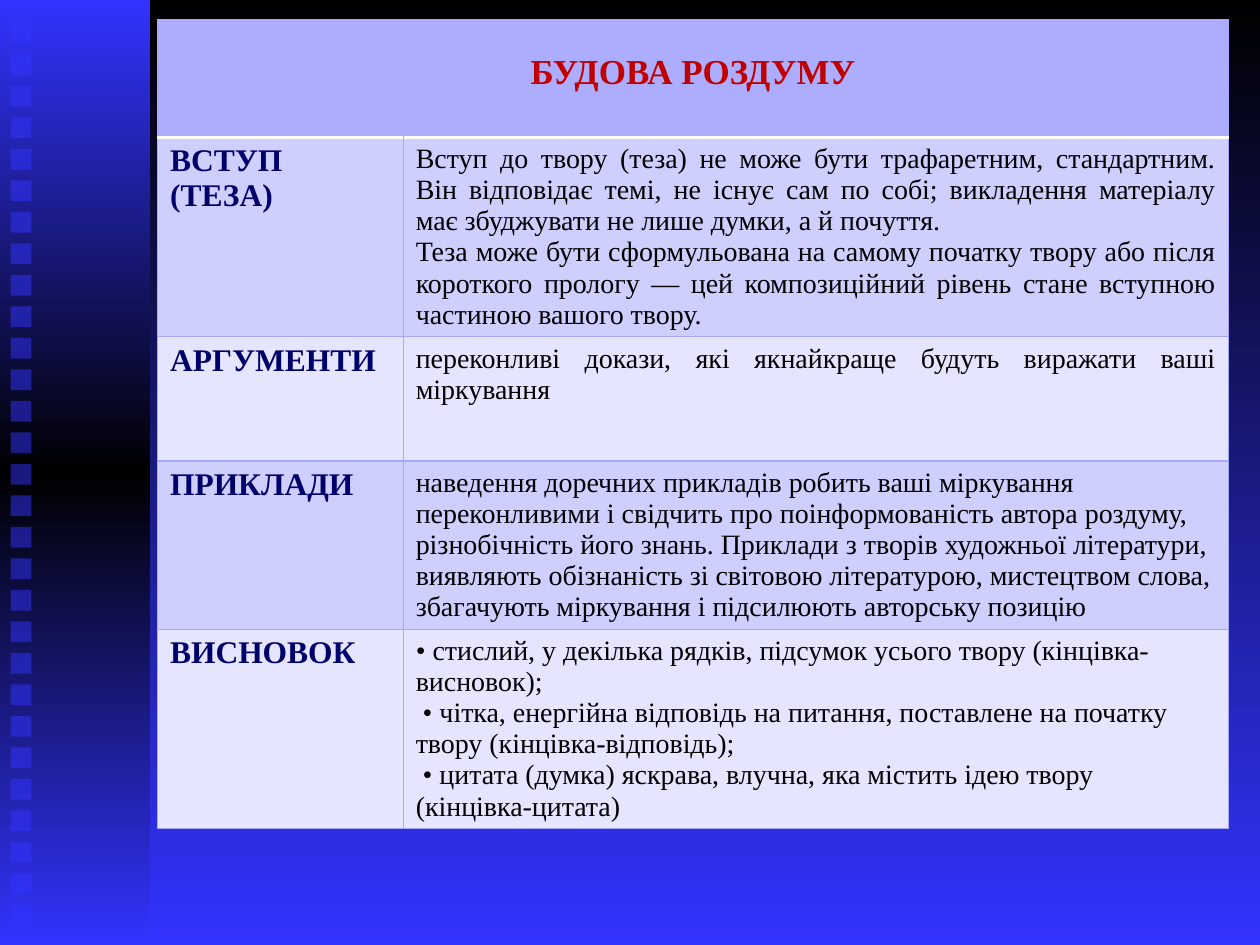
import copy
import dataclasses

import lxml.etree
import pptx
import pptx.dml.color
import pptx.enum.shapes
import pptx.enum.text
import pptx.oxml
import pptx.oxml.ns
import pptx.util

Pt = pptx.util.Pt
qn = pptx.oxml.ns.qn
ALIGN = pptx.enum.text.PP_ALIGN


@dataclasses.dataclass(frozen=True)
class Theme:
    """Colours, font and type sizes of the slide."""

    blue: str = "3333FF"
    black: str = "000000"
    white: str = "FFFFFF"
    header: str = "ADADFF"
    bands: tuple = ("CECEFF", "E5E5FF")
    border: str = "A7A7FB"
    title: str = "C00000"
    label: str = "00006B"
    font: str = "Times New Roman"
    title_size: float = 20
    label_size: float = 18
    body_size: float = 16


THEME = Theme()
TITLE = "БУДОВА РОЗДУМУ"
ROWS = [
    (114, ["ВСТУП", "(ТЕЗА)"], ALIGN.JUSTIFY, [
        "Вступ до твору (теза) не може бути трафаретним, стандартним. Він відповідає "
        "темі, не існує сам по собі; викладення матеріалу має збуджувати не лише "
        "думки, а й почуття.",
        "Теза може бути сформульована на самому початку твору або після короткого "
        "прологу — цей композиційний рівень стане вступною частиною вашого твору.",
    ]),
    (71, ["АРГУМЕНТИ"], ALIGN.JUSTIFY, [
        "переконливі докази, які якнайкраще будуть виражати ваші міркування",
    ]),
    (96, ["ПРИКЛАДИ"], ALIGN.LEFT, [
        "наведення доречних прикладів робить ваші міркування переконливими і свідчить "
        "про поінформованість автора роздуму, різнобічність його знань. Приклади з "
        "творів художньої літератури, виявляють обізнаність зі світовою літературою, "
        "мистецтвом слова, збагачують міркування і підсилюють авторську позицію",
    ]),
    (114, ["ВИСНОВОК"], ALIGN.LEFT, [
        "• стислий, у декілька рядків, підсумок усього твору (кінцівка-висновок);",
        " • чітка, енергійна відповідь на питання, поставлене на початку твору "
        "(кінцівка-відповідь);",
        " • цитата (думка) яскрава, влучна, яка містить ідею твору (кінцівка-цитата)",
    ]),
]


def rgb(value):
    """Return the colour for a hexadecimal value."""
    return pptx.dml.color.RGBColor.from_string(value)


def fill_gradient(fill, start, end):
    """Fill from top to bottom with two colours."""
    fill.gradient()
    fill.gradient_angle = 270
    for stop, color, position in zip(fill.gradient_stops, (start, end), (0, 1)):
        stop.color.rgb = rgb(color)
        stop.position = position


def add_rectangle(slide, left, top, width, height):
    """Add a plain rectangle without line or shadow."""
    shape = slide.shapes.add_shape(
        pptx.enum.shapes.MSO_SHAPE.RECTANGLE, Pt(left), Pt(top), Pt(width), Pt(height)
    )
    shape.shadow.inherit = False
    shape.line.fill.background()
    return shape


def add_side_band(slide, left, top, width, height):
    """Add the gradient band with its column of translucent squares."""
    band = add_rectangle(slide, left, top, width, height)
    fill_gradient(band.fill, THEME.blue, THEME.black)
    first, middle = band.element.xpath(".//a:gs")
    middle.set("pos", "50000")
    last = copy.deepcopy(first)
    last.set("pos", "100000")
    middle.addnext(last)

    size, step = 12, 18
    for index in range(29):
        square = add_rectangle(slide, left + 6, top + 13 + index * step, size, size)
        square.fill.solid()
        square.fill.fore_color.rgb = rgb(THEME.blue)
        color = square.element.spPr.find(qn("a:solidFill"))[0]
        lxml.etree.SubElement(color, qn("a:alpha")).set("val", "50000")


def set_borders(cell, **special):
    """Draw the four cell borders, with (colour, width) exceptions by side."""
    properties = cell._tc.get_or_add_tcPr()
    for index, side in enumerate("LRTB"):
        color, width = special.get(side, (THEME.border, 0.75))
        line = pptx.oxml.parse_xml(
            f'<a:ln{side} xmlns:a="http://schemas.openxmlformats.org/drawingml/2006/main" '
            f'w="{Pt(width)}"><a:solidFill><a:srgbClr val="{color}"/></a:solidFill></a:ln{side}>'
        )
        properties.insert(index, line)


def write_cell(cell, lines, fill, size, color, bold, alignment=ALIGN.LEFT):
    """Fill a cell and write its paragraphs."""
    cell.fill.solid()
    cell.fill.fore_color.rgb = rgb(fill)
    cell.text = "\n".join(lines)
    font_format = {"name": THEME.font, "size": Pt(size), "bold": bold}
    for paragraph in cell.text_frame.paragraphs:
        paragraph.alignment = alignment
        font = paragraph.runs[0].font
        font.color.rgb = rgb(color)
        for name, value in font_format.items():
            setattr(font, name, value)


def add_structure_table(slide, left, top, width, header_height):
    """Add the table with a merged title row and one row for each part."""
    heights = [header_height] + [row[0] for row in ROWS]
    table = slide.shapes.add_table(
        len(heights), 2, Pt(left), Pt(top), Pt(width), Pt(sum(heights))
    ).table
    table.horz_banding = False
    label_width = 140.4
    for column, column_width in zip(table.columns, (label_width, width - label_width)):
        column.width = Pt(column_width)
    for row, height in zip(table.rows, heights):
        row.height = Pt(height)

    divider = (THEME.white, 2)
    title = table.cell(0, 0)
    title.merge(table.cell(0, 1))
    write_cell(title, [TITLE], THEME.header, THEME.title_size, THEME.title, True, ALIGN.CENTER)
    title.margin_top = Pt(19.5)
    for column in range(2):
        set_borders(table.cell(0, column), B=divider)

    for index, (_, label, alignment, body) in enumerate(ROWS, start=1):
        fill = THEME.bands[(index - 1) % 2]
        label_cell, body_cell = table.cell(index, 0), table.cell(index, 1)
        write_cell(label_cell, label, fill, THEME.label_size, THEME.label, True)
        write_cell(body_cell, body, fill, THEME.body_size, THEME.black, False, alignment)
        special = {"T": divider} if index == 1 else {}
        for cell in (label_cell, body_cell):
            set_borders(cell, **special)


def main():
    """Build and save the presentation."""
    presentation = pptx.Presentation()
    presentation.slide_width, presentation.slide_height = Pt(720), Pt(540)
    slide = presentation.slides.add_slide(presentation.slide_layouts[6])
    fill_gradient(slide.background.fill, THEME.black, THEME.blue)
    add_side_band(slide, 0, 0, 85.7, 540)
    add_structure_table(slide, 90, 11, 612, 67.5)
    presentation.save("out.pptx")


if __name__ == "__main__":
    main()
